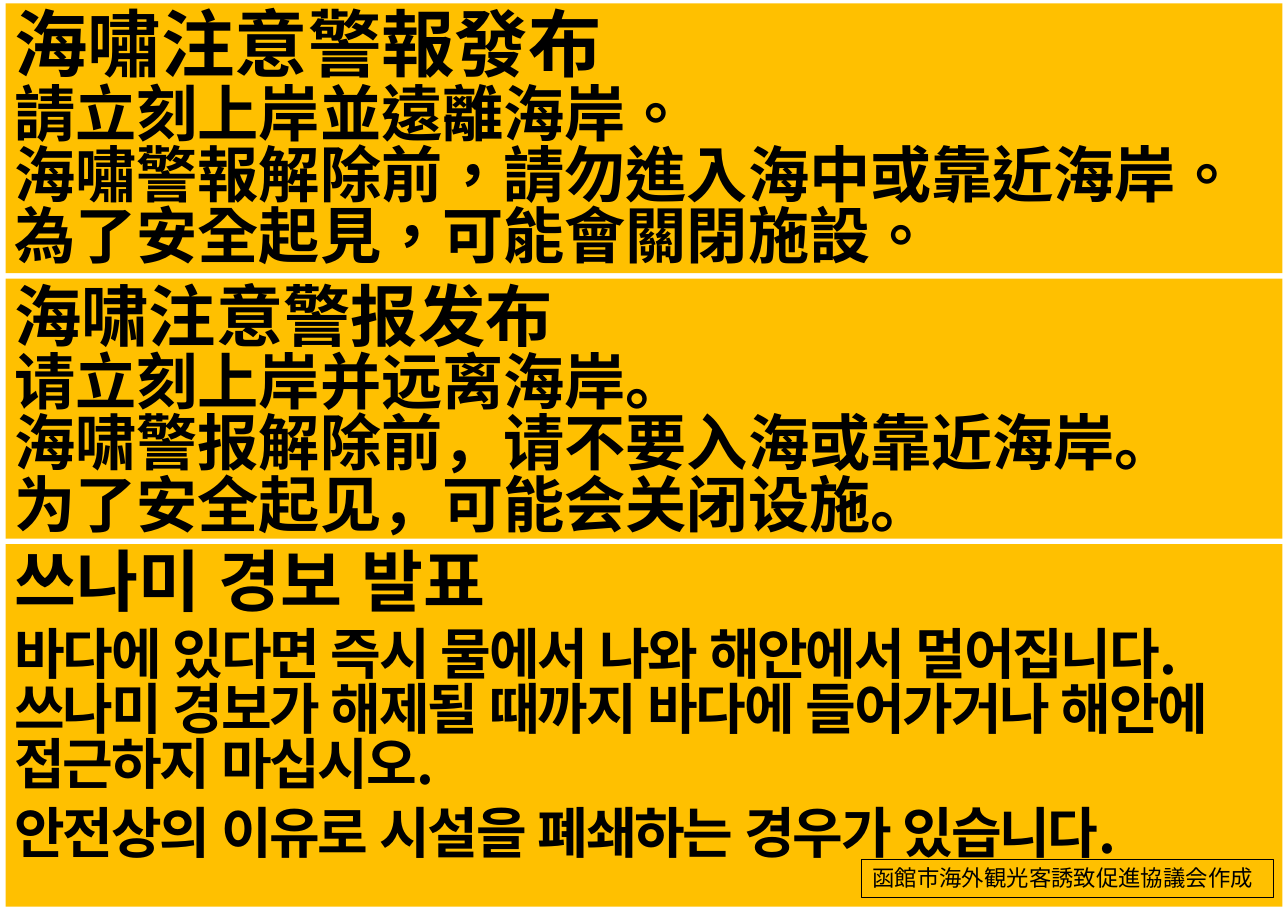
from dataclasses import dataclass

from lxml import etree
from pptx import Presentation
from pptx.dml.color import RGBColor
from pptx.enum.lang import MSO_LANGUAGE_ID
from pptx.enum.shapes import MSO_SHAPE
from pptx.enum.text import MSO_ANCHOR, PP_ALIGN
from pptx.oxml.ns import qn
from pptx.util import Inches, Pt

RECT = MSO_SHAPE.RECTANGLE
TOP, LEFT = MSO_ANCHOR.TOP, PP_ALIGN.LEFT
TAIWAN = MSO_LANGUAGE_ID.TRADITIONAL_CHINESE
CHINA = MSO_LANGUAGE_ID.SIMPLIFIED_CHINESE
KOREA = MSO_LANGUAGE_ID.KOREAN
JAPAN = MSO_LANGUAGE_ID.JAPANESE


@dataclass(frozen=True)
class Theme:
    amber: RGBColor = RGBColor(0xFF, 0xC0, 0x00)
    black: RGBColor = RGBColor(0, 0, 0)
    cjk: str = "Noto Sans CJK JP"
    latin: str = "Calibri"
    heading_large: float = 48
    heading: float = 44
    chinese: float = 40
    korean: float = 36
    credit: float = 14.6


THEME = Theme()


@dataclass(frozen=True)
class Line:
    text: str
    size: float
    spacing: object = 0.9
    before: float = 10
    tracking: float = 0


def format_paragraph(p, size, language, latin=THEME.cjk, bold=False, tracking=0):
    p.alignment = LEFT
    font = p.font
    font.name, font.size, font.bold = latin, Pt(size), bold
    font.color.rgb = THEME.black
    font.language_id = language
    props = p._p.pPr.find(qn("a:defRPr"))
    east_asian = etree.Element(qn("a:ea"), typeface=THEME.cjk)
    props.find(qn("a:latin")).addnext(east_asian)
    if tracking:
        props.set("spc", str(int(tracking * 100)))


def add_panel(s, top, height, language, lines):
    """Add one amber warning panel in the given language."""
    sp = s.shapes.add_shape(RECT, Inches(0.05), Inches(top), Inches(11.59), Inches(height))
    sp.shadow.inherit = False
    sp.fill.solid()
    sp.fill.fore_color.rgb = THEME.amber
    sp.line.fill.background()
    tf = sp.text_frame
    tf.word_wrap = True
    tf.vertical_anchor = TOP
    tf.margin_left = tf.margin_right = Inches(0.08)
    tf.margin_top = tf.margin_bottom = Inches(0.04)
    for i, line in enumerate(lines):
        p = tf.add_paragraph() if i else tf.paragraphs[0]
        p.text = line.text
        p.line_spacing = line.spacing
        p.space_before = Pt(line.before if i else 0)
        format_paragraph(p, line.size, language, bold=True, tracking=line.tracking)


def add_credit(s, text):
    sp = s.shapes.add_textbox(Inches(7.82), Inches(7.8), Inches(3.74), Inches(0.35))
    sp.line.color.rgb = THEME.black
    sp.line.width = Pt(0.75)
    tf = sp.text_frame
    tf.word_wrap = True
    p = tf.paragraphs[0]
    p.text = text
    format_paragraph(p, THEME.credit, JAPAN, latin=THEME.latin)


def chinese_lines(heading, heading_size, *body):
    return [Line(heading, heading_size)] + [
        Line(text, THEME.chinese, Pt(30)) for text in body
    ]


def main():
    prs = Presentation()
    prs.slide_width, prs.slide_height = Inches(11.69), Inches(8.27)
    s = prs.slides.add_slide(prs.slide_layouts.get_by_name("Blank"))

    add_panel(s, 0.03, 2.45, TAIWAN, chinese_lines(
        "海嘯注意警報發布", THEME.heading_large,
        "請立刻上岸並遠離海岸。",
        "海嘯警報解除前，請勿進入海中或靠近海岸。",
        "為了安全起見，可能會關閉施設。",
    ))
    add_panel(s, 2.53, 2.36, CHINA, chinese_lines(
        "海啸注意警报发布", THEME.heading,
        "请立刻上岸并远离海岸。",
        "海啸警报解除前，请不要入海或靠近海岸。",
        "为了安全起见，可能会关闭设施。",
    ))
    add_panel(s, 4.94, 3.29, KOREA, [
        Line("쓰나미 경보 발표", THEME.heading),
        Line("바다에 있다면 즉시 물에서 나와 해안에서 멀어집니다. "
             "쓰나미 경보가 해제될 때까지 바다에 들어가거나 해안에 접근하지 마십시오.",
             THEME.korean, Pt(36), before=6, tracking=-1.5),
        Line("안전상의 이유로 시설을 폐쇄하는 경우가 있습니다.",
             THEME.korean, Pt(35), tracking=-1.5),
    ])
    add_credit(s, "函館市海外観光客誘致促進協議会作成")
    prs.save("out.pptx")


if __name__ == "__main__":
    main()
